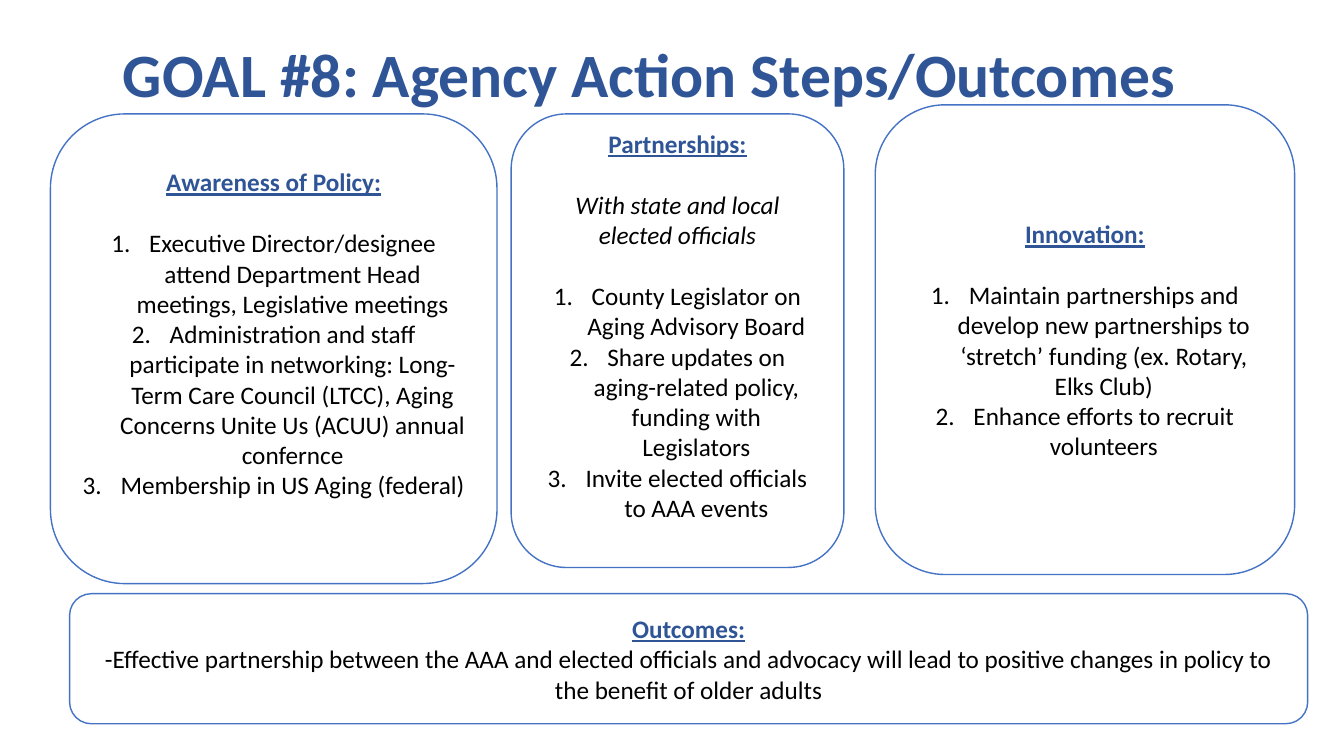
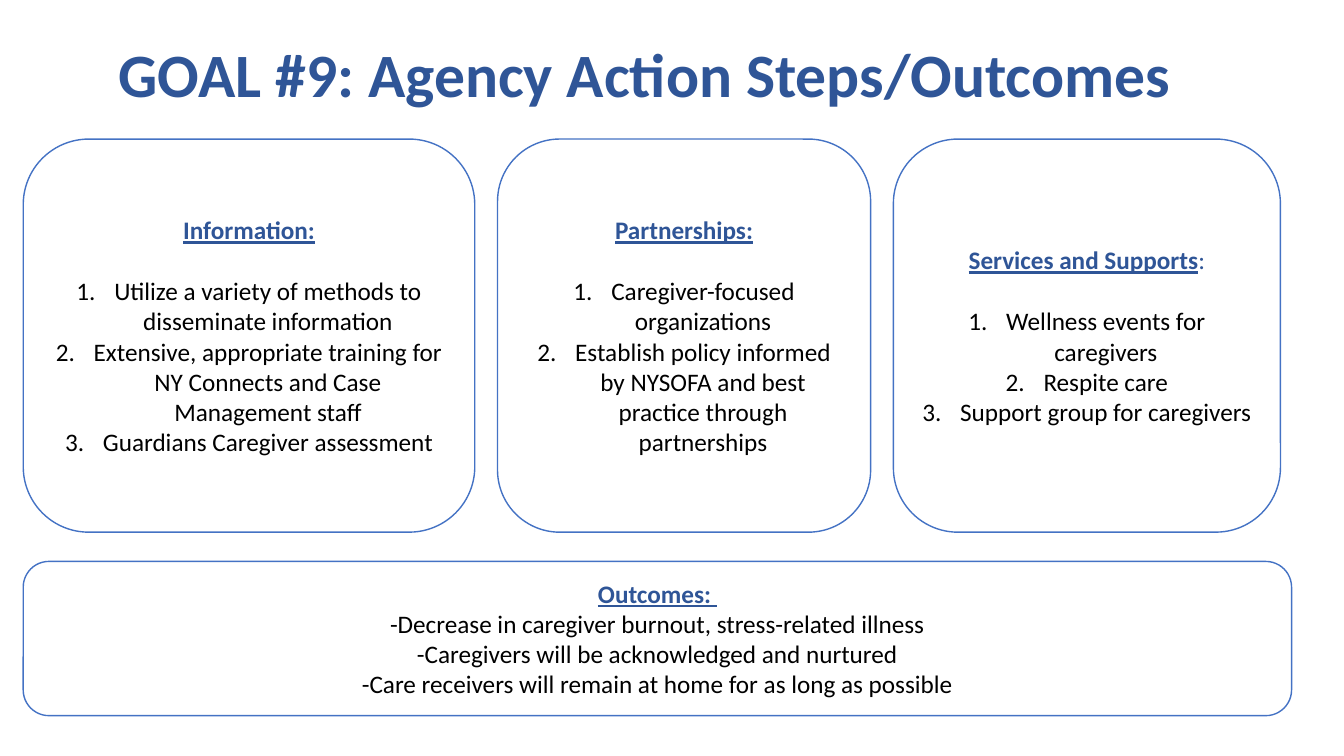
from dataclasses import dataclass

import pptx
import pptx.dml.color
import pptx.enum.shapes
import pptx.enum.text
import pptx.util
from lxml import etree

ALIGN = pptx.enum.text.PP_ALIGN
MIDDLE = pptx.enum.text.MSO_ANCHOR.MIDDLE
ROUNDED = pptx.enum.shapes.MSO_SHAPE.ROUNDED_RECTANGLE
DRAWING = "http://schemas.openxmlformats.org/drawingml/2006/main"


@dataclass(frozen=True)
class Theme:
    font: str = "Calibri"
    accent: str = "2F5597"
    outline: str = "4472C4"
    ink: str = "000000"
    paper: str = "FFFFFF"
    title_size: float = 44
    body_size: float = 18
    blank_line: float = 22
    indent: float = 27
    inset: float = 3.6


THEME = Theme()
WIDTH = pptx.util.Inches(13.33)
HEIGHT = pptx.util.Inches(7.5)
COLUMN = WIDTH / 100
ROW = HEIGHT / 100


def color(value):
    return pptx.dml.color.RGBColor.from_string(value)


def place(box):
    left, top, width, height = box
    return [round(n) for n in (left * COLUMN, top * ROW, width * COLUMN, height * ROW)]


def style(font, size, ink, bold=False):
    font.name = THEME.font
    font.size = pptx.util.Pt(size)
    font.color.rgb = color(ink)
    font.bold = bold


def number(para):
    properties = para._p.get_or_add_pPr()
    indent = pptx.util.Pt(THEME.indent)
    properties.set("marL", str(indent))
    properties.set("indent", str(-indent))
    etree.SubElement(properties, f"{{{DRAWING}}}buFont", typeface="+mj-lt")
    etree.SubElement(properties, f"{{{DRAWING}}}buAutoNum", type="arabicPeriod")


def add_title(page, box, text, align):
    frame = page.shapes.add_textbox(*place(box)).text_frame
    frame.word_wrap = True
    frame.vertical_anchor = MIDDLE
    para = frame.paragraphs[0]
    para.text = text
    para.alignment = align
    para.line_spacing = 0.9
    style(para.font, THEME.title_size, THEME.accent, bold=True)


def add_panel(page, box, heading, plain_end=""):
    panel = page.shapes.add_shape(ROUNDED, *place(box))
    panel.shadow.inherit = False
    panel.fill.solid()
    panel.fill.fore_color.rgb = color(THEME.paper)
    panel.line.color.rgb = color(THEME.outline)
    panel.line.width = pptx.util.Pt(1)
    frame = panel.text_frame
    frame.word_wrap = True
    frame.vertical_anchor = MIDDLE
    para = frame.paragraphs[0]
    para.alignment = ALIGN.CENTER
    for text, strong in ((heading, True), (plain_end, False)):
        if text:
            span = para.add_run()
            span.text = text
            style(span.font, THEME.body_size, THEME.accent, bold=strong)
            span.font.underline = strong
    return frame


def add_line(frame, text, gap=False, numbered=False, italic=False):
    para = frame.add_paragraph()
    para.text = text
    para.alignment = ALIGN.CENTER
    if gap:
        para.space_before = pptx.util.Pt(THEME.blank_line)
    if numbered:
        number(para)
    style(para.font, THEME.body_size, THEME.ink)
    para.font.italic = italic


def add_card(page, box, heading, steps, note="", plain_end="", raised=False):
    frame = add_panel(page, box, heading, plain_end)
    if raised:
        frame.margin_bottom = pptx.util.Pt(THEME.inset + THEME.blank_line)
    if note:
        add_line(frame, note, gap=True, italic=True)
    for index, step in enumerate(steps):
        add_line(frame, step, gap=index == 0, numbered=True)


def add_outcomes(page, box, heading, results):
    frame = add_panel(page, box, heading)
    for result in results:
        add_line(frame, result)


def row_of_boxes(left, top, widths, height, gap):
    for width in widths:
        yield left, top, width, height
        left += width + gap


def build_policy_goal(page):
    add_title(page, (8.4, 0, 91.5, 20.4), "GOAL #8: Agency Action Steps/Outcomes", ALIGN.LEFT)
    add_card(page, (3.75, 15.07, 33.23, 62.13), "Awareness of Policy:", [
        "Executive Director/designee attend Department Head meetings, Legislative meetings",
        "Administration and staff participate in networking: Long-Term Care Council (LTCC), "
        "Aging Concerns Unite Us (ACUU) annual confernce",
        "Membership in US Aging (federal)",
    ], raised=True)
    add_card(page, (38.03, 15.07, 24.76, 60), "Partnerships:", [
        "County Legislator on Aging Advisory Board",
        "Share updates on aging-related policy, funding with Legislators",
        "Invite elected officials to AAA events",
    ], note="With state and local elected officials", raised=True)
    add_card(page, (65.12, 13.87, 31.21, 62.13), "Innovation:", [
        "Maintain partnerships and develop new partnerships to ‘stretch’ funding (ex. Rotary, Elks Club)",
        "Enhance efforts to recruit volunteers",
    ])
    add_outcomes(page, (5.18, 78.53, 92.12, 17.2), "Outcomes:", [
        "-Effective partnership between the AAA and elected officials and advocacy will lead "
        "to positive changes in policy to the benefit of older adults",
    ])


def build_caregiver_goal(page):
    left = 1.73
    information, partnerships, services = row_of_boxes(left, 18.4, (33.6, 27.76, 28.8), 52, 1.69)
    add_title(page, (left, 0, 93.55, 20.4), "GOAL #9: Agency Action Steps/Outcomes ", ALIGN.CENTER)
    add_card(page, information, "Information:", [
        "Utilize a variety of methods to disseminate information",
        "Extensive, appropriate training for NY Connects and Case Management staff",
        "Guardians Caregiver assessment",
    ])
    add_card(page, partnerships, "Partnerships:", [
        "Caregiver-focused organizations",
        "Establish policy informed by NYSOFA and best practice through partnerships",
    ])
    add_card(page, services, "Services and Supports", [
        "Wellness events for caregivers",
        "Respite care",
        "Support group for caregivers",
    ], plain_end=":")
    add_outcomes(page, (left, 74.27, 94.37, 20.4), "Outcomes: ", [
        "-Decrease in caregiver burnout, stress-related illness",
        "-Caregivers will be acknowledged and nurtured",
        "-Care receivers will remain at home for as long as possible",
    ])


def main():
    deck = pptx.Presentation()
    deck.slide_width = WIDTH
    deck.slide_height = HEIGHT
    for build in (build_policy_goal, build_caregiver_goal):
        build(deck.slides.add_slide(deck.slide_layouts[6]))
    deck.save("out.pptx")


if __name__ == "__main__":
    main()
